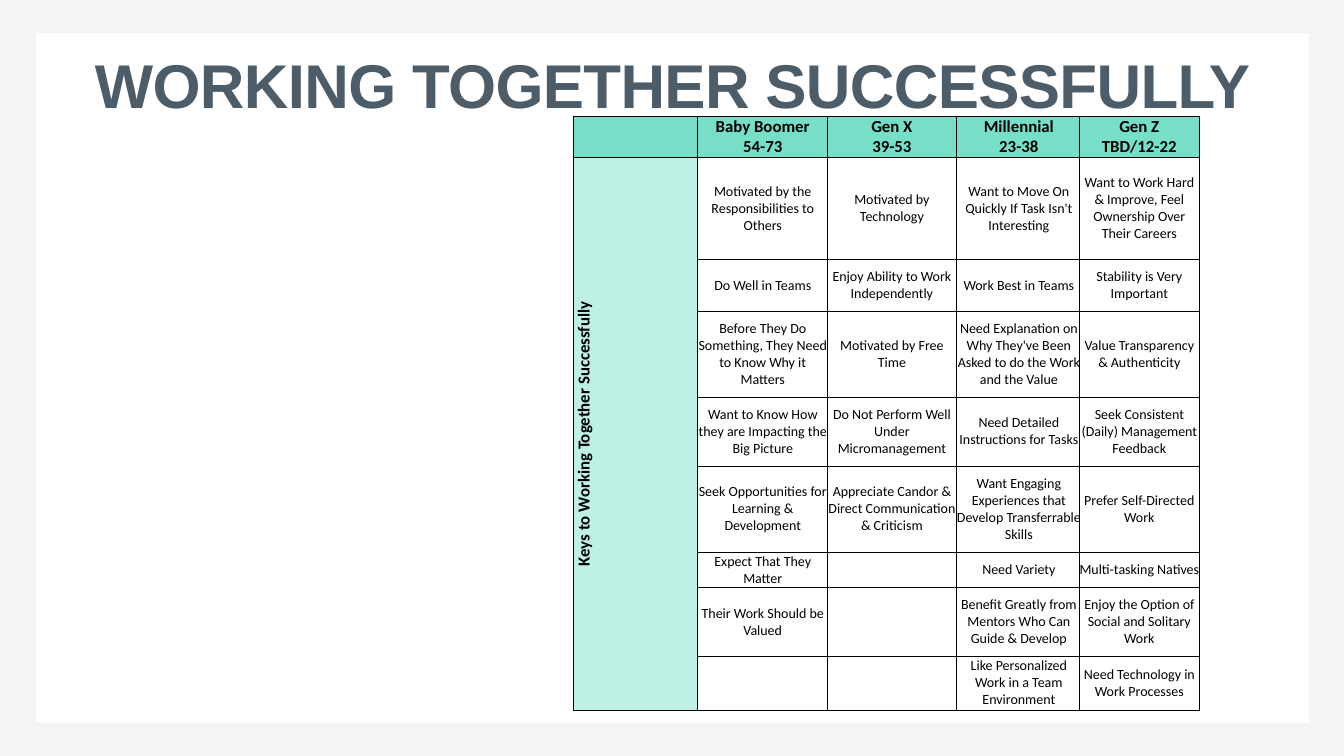
import pptx
import pptx.dml.color
import pptx.enum.shapes
import pptx.enum.text
import pptx.oxml
import pptx.util

MINT, PALE_MINT, WHITE = "77DEC8", "BEF0E5", "FFFFFF"
CENTER = pptx.enum.text.PP_ALIGN.CENTER
ANCHOR = pptx.enum.text.MSO_ANCHOR

# Lengths are percentages of the slide's width and height.
TABLE_TOP = 15.33
HEADER_HEIGHT = 5.51
ROW_HEIGHTS = [13.5, 6.82, 11.38, 9.11, 11.38, 4.71, 9.08, 7.15]

KEY_COLUMN = (42.69, 9.23, "Keys to Working Together Successfully")
GENERATIONS = [
    (51.91, 9.68, "Baby Boomer\n54-73", [
        "Motivated by the Responsibilities to Others",
        "Do Well in Teams",
        "Before They Do Something, They Need to Know Why it Matters",
        "Want to Know How they are Impacting the Big Picture",
        "Seek Opportunities for Learning & Development",
        "Expect That They Matter",
        "Their Work Should be Valued",
        "",
    ]),
    (61.52, 9.68, "Gen X\n39-53", [
        "Motivated by Technology",
        "Enjoy Ability to Work Independently",
        "Motivated by Free Time",
        "Do Not Perform Well Under Micromanagement",
        "Appreciate Candor & Direct Communication & Criticism",
        "",
        "",
        "",
    ]),
    (71.19, 9.23, "Millennial\n23-38", [
        "Want to Move On Quickly If Task Isn't Interesting",
        "Work Best in Teams",
        "Need Explanation on Why They've Been Asked to do the Work and the Value",
        "Need Detailed Instructions for Tasks",
        "Want Engaging Experiences that Develop Transferrable Skills",
        "Need Variety",
        "Benefit Greatly from Mentors Who Can Guide & Develop",
        "Like Personalized Work in a Team Environment",
    ]),
    (80.27, 9.0, "Gen Z\nTBD/12-22", [
        "Want to Work Hard & Improve, Feel Ownership Over Their Careers",
        "Stability is Very Important",
        "Value Transparency & Authenticity",
        "Seek Consistent (Daily) Management Feedback",
        "Prefer Self-Directed Work",
        "Multi-tasking Natives",
        "Enjoy the Option of Social and Solitary Work",
        "Need Technology in Work Processes",
    ]),
]


def color(value):
    return pptx.dml.color.RGBColor.from_string(value)


def set_all(target, values):
    for name, value in values.items():
        setattr(target, name, value)


class SlideBuilder:
    heading = {"name": "Calibri", "size": pptx.util.Pt(12), "bold": True}
    body = {"name": "Calibri", "size": pptx.util.Pt(10), "bold": False}
    title_font = {"name": "Arial", "size": pptx.util.Pt(44.1), "bold": True}

    def __init__(self, presentation, background):
        self.width = presentation.slide_width
        self.height = presentation.slide_height
        self.slide = presentation.slides.add_slide(presentation.slide_layouts[6])
        fill = self.slide.background.fill
        fill.solid()
        fill.fore_color.rgb = color(background)

    def across(self, share):
        return round(self.width * share / 100)

    def down(self, share):
        return round(self.height * share / 100)

    def box(self, left, top, width, height):
        return self.across(left), self.down(top), self.across(width), self.down(height)

    def fill_text(self, frame, text, font, text_color):
        frame.text = text
        for paragraph in frame.paragraphs:
            paragraph.alignment = CENTER
            for run in paragraph.runs:
                set_all(run.font, font)
                run.font.color.rgb = color(text_color)

    def panel(self, *place, fill):
        shape = self.slide.shapes.add_shape(
            pptx.enum.shapes.MSO_SHAPE.RECTANGLE, *self.box(*place))
        shape.shadow.inherit = False
        shape.fill.solid()
        shape.fill.fore_color.rgb = color(fill)
        shape.line.fill.background()

    def title(self, *place, text, text_color):
        frame = self.slide.shapes.add_textbox(*self.box(*place)).text_frame
        inset = pptx.util.Inches(0.06)
        set_all(frame, {
            "word_wrap": True,
            "vertical_anchor": ANCHOR.TOP,
            "margin_left": inset,
            "margin_right": inset,
            "margin_top": pptx.util.Inches(0.14),
            "margin_bottom": inset,
        })
        self.fill_text(frame, text, self.title_font, text_color)
        paragraph = frame.paragraphs[0]
        paragraph.line_spacing = 0.8
        paragraph.runs[0].font._element.set("spc", "-50")

    def border(self, cell):
        properties = cell._tc.get_or_add_tcPr()
        for side in ("lnL", "lnR", "lnT", "lnB"):
            properties.append(pptx.oxml.parse_xml(
                f'<a:{side} xmlns:a="http://schemas.openxmlformats.org/drawingml/2006/main"'
                ' w="6350"><a:solidFill><a:srgbClr val="000000"/></a:solidFill>'
                f'</a:{side}>'))

    def column(self, left, width, entries, heights):
        """Add a one-column table; each entry is (text, font, fill, anchor)."""
        place = self.box(left, TABLE_TOP, width, sum(heights))
        table = self.slide.shapes.add_table(len(entries), 1, *place).table
        set_all(table, {"first_row": False, "horz_banding": False})
        for index, (text, font, fill, anchor) in enumerate(entries):
            table.rows[index].height = self.down(heights[index])
            cell = table.cell(index, 0)
            self.border(cell)
            set_all(cell, {
                "margin_left": 0, "margin_right": 0,
                "margin_top": 0, "margin_bottom": 0,
                "vertical_anchor": anchor,
            })
            cell.fill.solid()
            cell.fill.fore_color.rgb = color(fill)
            self.fill_text(cell.text_frame, text, font, "000000")
        return table

    def key_column(self, left, width, text):
        entries = [("", self.heading, MINT, ANCHOR.BOTTOM),
                   (text, self.heading, PALE_MINT, ANCHOR.MIDDLE)]
        table = self.column(left, width, entries, [HEADER_HEIGHT, sum(ROW_HEIGHTS)])
        table.cell(1, 0)._tc.get_or_add_tcPr().set("vert", "vert270")

    def generation_column(self, left, width, name, traits):
        entries = [(name, self.heading, MINT, ANCHOR.BOTTOM)]
        entries += [(trait, self.body, WHITE, ANCHOR.MIDDLE) for trait in traits]
        self.column(left, width, entries, [HEADER_HEIGHT, *ROW_HEIGHTS])


def main():
    presentation = pptx.Presentation()
    presentation.slide_width = pptx.util.Inches(13.33)
    presentation.slide_height = pptx.util.Inches(7.5)
    builder = SlideBuilder(presentation, "F4F4F4")
    builder.panel(2.7, 4.4, 94.67, 91.2, fill=WHITE)
    builder.title(1.8, 6.27, 96.47, 12.8,
                  text="WORKING TOGETHER SUCCESSFULLY", text_color="4C5C69")
    builder.key_column(*KEY_COLUMN)
    for generation in GENERATIONS:
        builder.generation_column(*generation)
    presentation.save("out.pptx")


if __name__ == "__main__":
    main()
